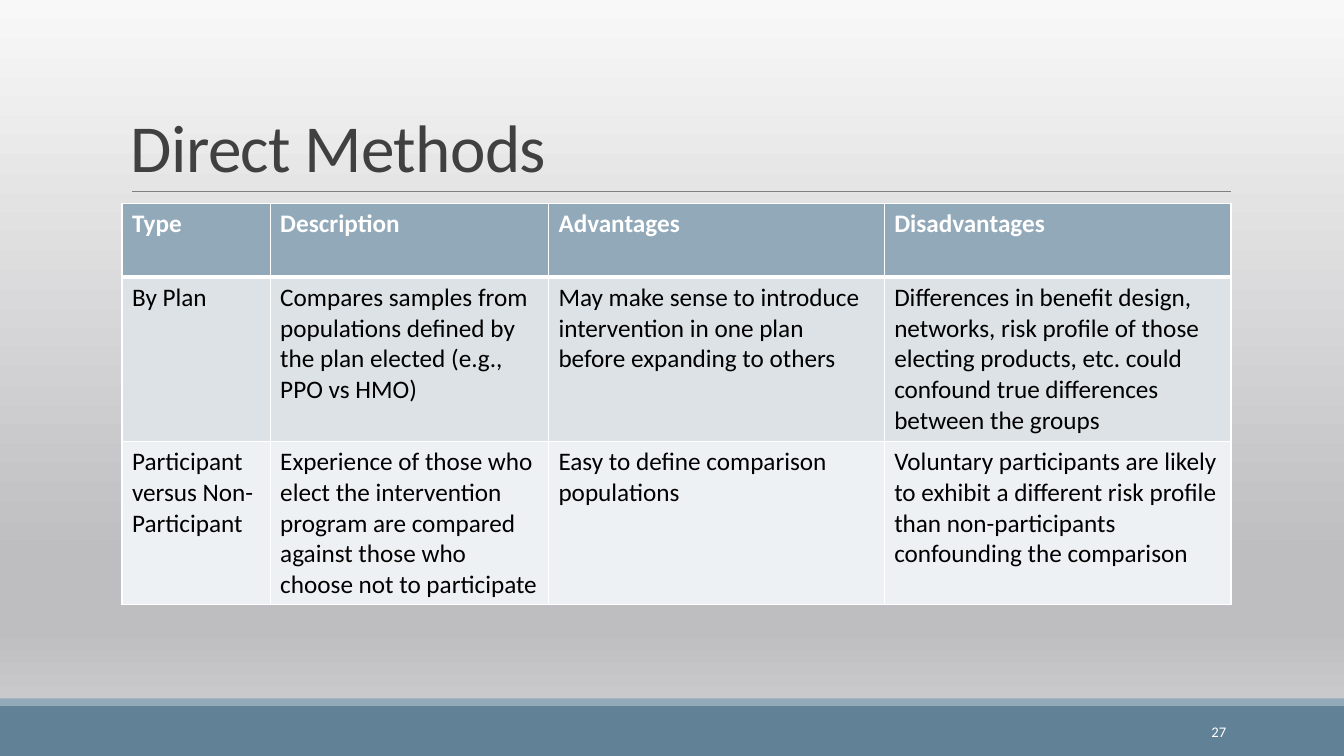
from dataclasses import dataclass

from lxml.etree import SubElement
from pptx import Presentation
from pptx.dml.color import RGBColor
from pptx.enum.shapes import MSO_CONNECTOR, MSO_SHAPE
from pptx.enum.text import MSO_ANCHOR as Anchor, PP_ALIGN as Align
from pptx.oxml.ns import qn
from pptx.util import Inches, Pt

FONT = "Calibri"
WHITE = "FFFFFF"
STOPS = [(0, "F8F8F8"), (74, "BEBEC1"), (83, "BEBEC1"), (100, "D4D4D5")]
COLUMN_WIDTHS = [1.47, 2.76, 3.33, 3.44]


@dataclass
class Band:
    top: float
    height: float
    color: str


@dataclass
class Label:
    text: str
    box: tuple[float, float, float, float]
    size: float
    color: str
    anchor: Anchor
    align: Align = Align.LEFT
    line_spacing: float = 1.0
    tracking: int = 0


@dataclass
class Row:
    height: float
    fill: str
    color: str
    bold: bool
    top_border: float
    bottom_border: float
    texts: list[str]


BANDS = [Band(7, 0.5, "618197"), Band(6.93, 0.07, "92A9B9")]

LABELS = [
    Label("Direct Methods", (1.2, 0.31, 11, 1.59), 48, "404040",
          Anchor.BOTTOM, line_spacing=0.85, tracking=-50),
    Label("27", (10.83, 7.06, 1.43, 0.4), 10.5, WHITE,
          Anchor.MIDDLE, Align.RIGHT),
]

ROWS = [
    Row(0.73, "92A9B9", WHITE, True, 1, 3,
        ["Type", "Description", "Advantages", "Disadvantages"]),
    Row(1.63, "DCE2E6", "000000", False, 3, 1, [
        "By Plan",
        "Compares samples from populations defined by the plan elected "
        "(e.g., PPO vs HMO)",
        "May make sense to introduce intervention in one plan before "
        "expanding to others",
        "Differences in benefit design, networks, risk profile of those "
        "electing products, etc. could confound true differences between "
        "the groups",
    ]),
    Row(1.62, "EEF1F3", "000000", False, 1, 1, [
        "Participant versus Non-Participant",
        "Experience of those who elect the intervention program are "
        "compared against those who choose not to participate",
        "Easy to define comparison populations",
        "Voluntary participants are likely to exhibit a different risk "
        "profile than non-participants confounding the comparison",
    ]),
]


def rgb(color: str) -> RGBColor:
    return RGBColor.from_string(color)


def set_font(p, size: float, color: str, bold: bool = False) -> None:
    p.font.name = FONT
    p.font.size = Pt(size)
    p.font.bold = bold
    p.font.color.rgb = rgb(color)


def paint_background(s) -> None:
    fill = s.background.fill
    fill.gradient()
    fill.gradient_angle = 270
    stops = next(s._element.iter(qn("a:gsLst")))
    for stop in list(stops):
        stops.remove(stop)
    for position, color in STOPS:
        stop = SubElement(stops, qn("a:gs"), pos=str(position * 1000))
        SubElement(stop, qn("a:srgbClr"), val=color)


def add_band(s, band: Band) -> None:
    sp = s.shapes.add_shape(MSO_SHAPE.RECTANGLE, 0, Inches(band.top),
                            Inches(13.33), Inches(band.height))
    sp.shadow.inherit = False
    sp.fill.solid()
    sp.fill.fore_color.rgb = rgb(band.color)
    sp.line.fill.background()


def add_rule(s) -> None:
    rule = s.shapes.add_connector(MSO_CONNECTOR.STRAIGHT, Inches(1.31),
                                  Inches(1.9), Inches(12.21), Inches(1.9))
    rule.line.color.rgb = rgb("808080")
    rule.line.width = Pt(0.5)
    SubElement(rule._element.spPr, qn("a:effectLst"))


def add_label(s, label: Label) -> None:
    sp = s.shapes.add_textbox(*map(Inches, label.box))
    tf = sp.text_frame
    tf.word_wrap = True
    tf.vertical_anchor = label.anchor
    p = tf.paragraphs[0]
    p.alignment = label.align
    p.line_spacing = label.line_spacing
    r = p.add_run()
    r.text = label.text
    set_font(p, label.size, label.color)
    if label.tracking:
        r._r.get_or_add_rPr().set("spc", str(label.tracking))


def add_border(cell, side: str, width: float) -> None:
    ln = SubElement(cell._tc.get_or_add_tcPr(), qn(f"a:ln{side}"),
                    w=str(Pt(width)))
    fill = SubElement(ln, qn("a:solidFill"))
    SubElement(fill, qn("a:srgbClr"), val=WHITE)


def add_methods_table(s) -> None:
    table = s.shapes.add_table(
        len(ROWS), len(COLUMN_WIDTHS), Inches(1.21), Inches(2.02),
        Inches(sum(COLUMN_WIDTHS)), Inches(sum(row.height for row in ROWS)),
    ).table
    for column, width in zip(table.columns, COLUMN_WIDTHS):
        column.width = Inches(width)
    for table_row, row in zip(table.rows, ROWS):
        table_row.height = Inches(row.height)
        borders = {"L": 1, "R": 1, "T": row.top_border, "B": row.bottom_border}
        for cell, text in zip(table_row.cells, row.texts):
            cell.text = text
            set_font(cell.text_frame.paragraphs[0], 18, row.color, row.bold)
            for side, width in borders.items():
                add_border(cell, side, width)
            cell.fill.solid()
            cell.fill.fore_color.rgb = rgb(row.fill)


def main() -> None:
    prs = Presentation()
    prs.slide_width = Inches(13.33)
    prs.slide_height = Inches(7.5)
    s = prs.slides.add_slide(prs.slide_layouts[6])
    paint_background(s)
    for band in BANDS:
        add_band(s, band)
    add_rule(s)
    for label in LABELS:
        add_label(s, label)
    add_methods_table(s)
    prs.save("out.pptx")


if __name__ == "__main__":
    main()
